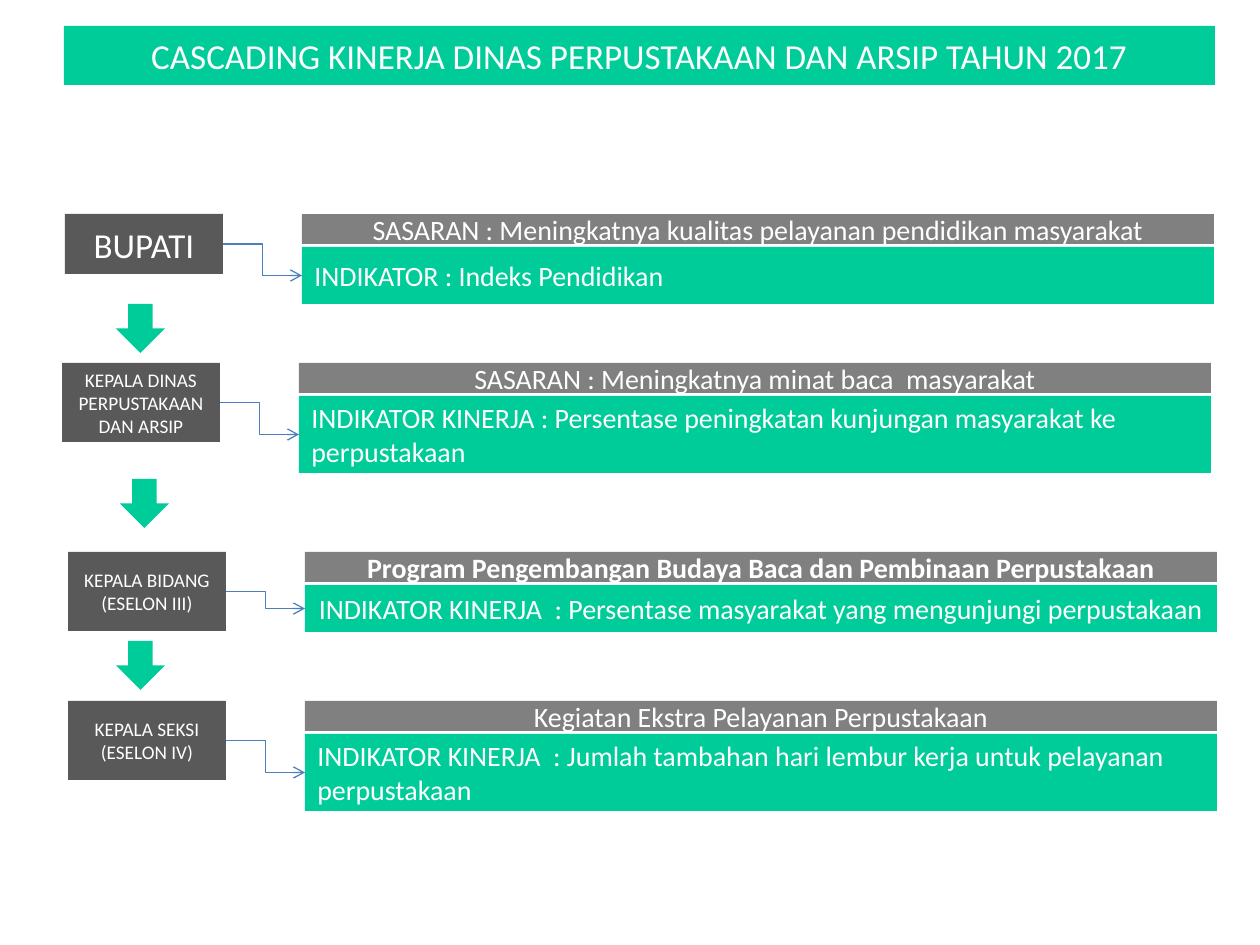
from lxml import etree
from pptx import Presentation
from pptx.dml.color import RGBColor
from pptx.enum.shapes import MSO_CONNECTOR, MSO_SHAPE
from pptx.enum.text import MSO_ANCHOR, PP_ALIGN
from pptx.oxml.ns import qn
from pptx.util import Pt

PX = 914400 // 126
RECT, DOWN_ARROW = MSO_SHAPE.RECTANGLE, MSO_SHAPE.DOWN_ARROW
ELBOW = MSO_CONNECTOR.ELBOW
LEFT, CENTER = PP_ALIGN.LEFT, PP_ALIGN.CENTER
MIDDLE = MSO_ANCHOR.MIDDLE

GREEN, DARK, GRAY, WHITE, BLUE = "00CC99", "595959", "808080", "FFFFFF", "4B7EBC"
FONT = "Calibri"

ROLE_WIDTH, GOAL_WIDTH = 158, 912
GOAL_OFFSET, GOAL_HEIGHT, INDICATOR_OFFSET = 237, 30, 33
ARROW_SIZE = 49

# left, top, role height, role lines, role size, goal, goal bold,
# indicator, indicator height, indicator alignment
LEVELS = [
    (65, 214, 60, ["BUPATI"], 20,
     "SASARAN : Meningkatnya kualitas pelayanan pendidikan masyarakat", False,
     "INDIKATOR : Indeks Pendidikan", 57, LEFT),
    (62, 363, 79, ["KEPALA DINAS", "PERPUSTAKAAN DAN ARSIP"], 11,
     "SASARAN : Meningkatnya minat baca  masyarakat", False,
     "INDIKATOR KINERJA : Persentase peningkatan kunjungan masyarakat ke perpustakaan",
     77, LEFT),
    (68, 552, 79, ["KEPALA BIDANG", "(ESELON III)"], 11,
     "Program Pengembangan Budaya Baca dan Pembinaan Perpustakaan", True,
     "INDIKATOR KINERJA  : Persentase masyarakat yang mengunjungi perpustakaan",
     47, CENTER),
    (68, 701, 79, ["KEPALA SEKSI", "(ESELON IV)"], 11,
     "Kegiatan Ekstra Pelayanan Perpustakaan", False,
     "INDIKATOR KINERJA  : Jumlah tambahan hari lembur kerja untuk pelayanan perpustakaan",
     77, LEFT),
]
DOWN_ARROWS = [(116, 304), (120, 479), (116, 641)]


def color(hex_value):
    return RGBColor.from_string(hex_value)


def add_block(slide, kind, left, top, width, height, fill):
    block = slide.shapes.add_shape(kind, left * PX, top * PX, width * PX, height * PX)
    block.shadow.inherit = False
    block.fill.solid()
    block.fill.fore_color.rgb = color(fill)
    block.line.fill.background()
    return block


def add_label(slide, left, top, width, height, fill, lines, size,
              align=CENTER, bold=False):
    label = add_block(slide, RECT, left, top, width, height, fill)
    frame = label.text_frame
    frame.word_wrap = True
    frame.vertical_anchor = MIDDLE
    for index, line in enumerate(lines):
        paragraph = frame.add_paragraph() if index else frame.paragraphs[0]
        paragraph.alignment = align
        run = paragraph.add_run()
        run.text = line
        run.font.name = FONT
        run.font.size = Pt(size)
        run.font.bold = bold
        run.font.color.rgb = color(WHITE)
    return label


def add_link(slide, role, indicator):
    link = slide.shapes.add_connector(ELBOW, 0, 0, 0, 0)
    link.begin_connect(role, 3)
    link.end_connect(indicator, 1)
    link.line.color.rgb = color(BLUE)
    link.line.width = Pt(0.75)
    etree.SubElement(link.line._get_or_add_ln(), qn("a:tailEnd"), type="arrow")
    etree.SubElement(link._element.spPr, qn("a:effectLst"))


def add_level(slide, left, top, role_height, role_lines, role_size,
              goal, goal_bold, indicator, indicator_height, indicator_align):
    goal_left = left + GOAL_OFFSET
    role_box = add_label(slide, left, top, ROLE_WIDTH, role_height, DARK,
                         role_lines, role_size)
    add_label(slide, goal_left, top, GOAL_WIDTH, GOAL_HEIGHT, GRAY,
              [goal], 16, bold=goal_bold)
    indicator_box = add_label(slide, goal_left, top + INDICATOR_OFFSET, GOAL_WIDTH,
                              indicator_height, GREEN, [indicator], 16, indicator_align)
    add_link(slide, role_box, indicator_box)


def main():
    deck = Presentation()
    deck.slide_width, deck.slide_height = 1260 * PX, 945 * PX
    slide = deck.slides.add_slide(deck.slide_layouts[6])

    # Title band
    add_label(slide, 64, 26, 1151, 59, GREEN,
              ["CASCADING KINERJA DINAS PERPUSTAKAAN DAN ARSIP TAHUN 2017"], 20)

    # Levels of responsibility, each with its goal and indicator
    for level in LEVELS:
        add_level(slide, *level)

    # Arrows from each level to the next
    for left, top in DOWN_ARROWS:
        add_block(slide, DOWN_ARROW, left, top, ARROW_SIZE, ARROW_SIZE, GREEN)

    deck.save("out.pptx")


if __name__ == "__main__":
    main()
